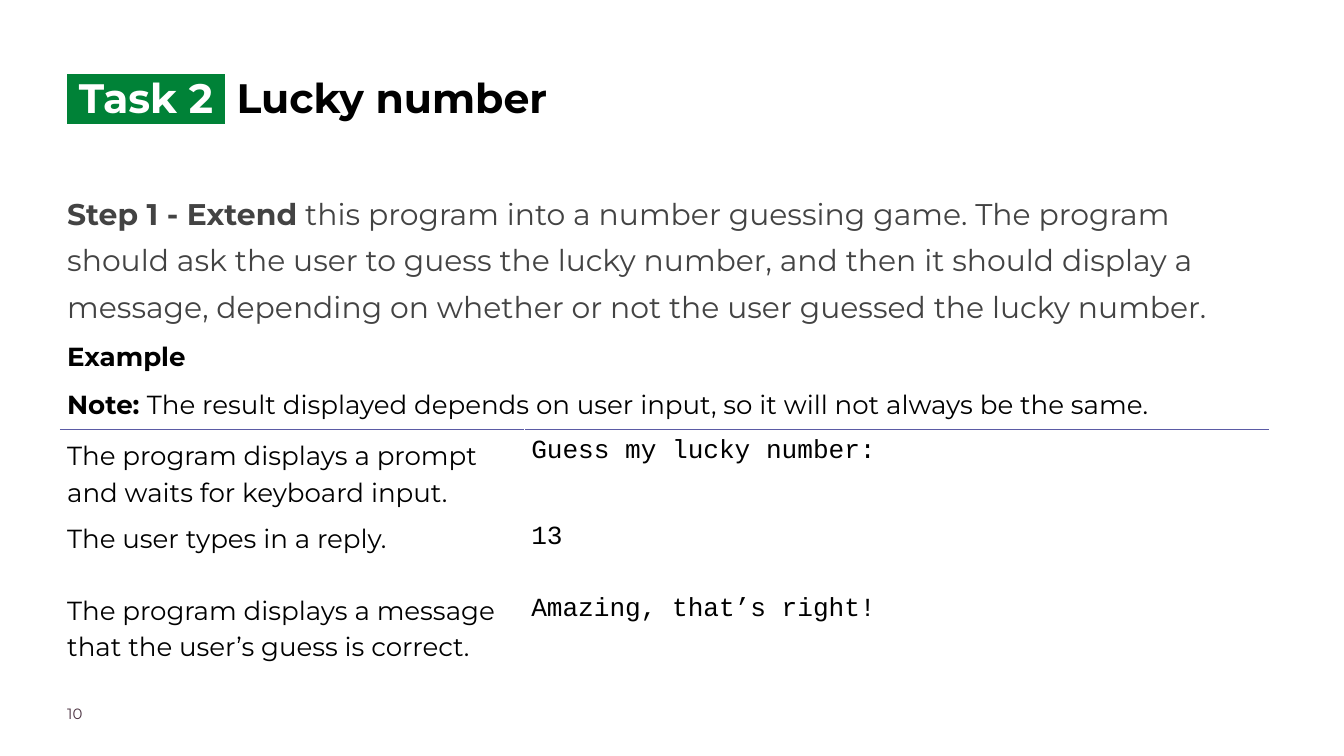
from lxml.etree import SubElement
from pptx import Presentation
from pptx.dml.color import RGBColor
from pptx.enum.text import MSO_ANCHOR, MSO_AUTO_SIZE, PP_ALIGN
from pptx.oxml import parse_xml
from pptx.oxml.ns import nsdecls, qn
from pptx.util import Emu, Pt

EMU_PER_PX = 9525
SANS, MONO = "Montserrat", "Courier New"
WHITE = RGBColor(0xFF, 0xFF, 0xFF)
BLACK = RGBColor(0x00, 0x00, 0x00)
GREEN = RGBColor(0x00, 0x82, 0x37)
GREY = RGBColor(0x43, 0x43, 0x43)
PLUM = RGBColor(0x4B, 0x32, 0x41)
VIOLET = RGBColor(0x5B, 0x5B, 0xA5)

COLUMN_WIDTHS = (663, 1064)
ROW_HEIGHTS = (58, 78, 123, 102, 102)
NOTE_ROW = 1
DIALOGUE = (
    ("The program displays a prompt and waits for keyboard input.", "Guess my lucky number:"),
    ("The user types in a reply.", "13"),
    ("The program displays a message that the user’s guess is correct.", "Amazing, that’s right!"),
)


def px(length):
    return Emu(length * EMU_PER_PX)


def write(frame, text, *, size, color=BLACK, font=SANS, bold=False, spacing=None):
    """Append a run to the frame's first paragraph and return it."""
    paragraph = frame.paragraphs[0]
    paragraph.alignment = PP_ALIGN.LEFT
    if spacing:
        paragraph.line_spacing = spacing
    run = paragraph.add_run()
    run.text = text
    run.font.size, run.font.name, run.font.bold = Pt(size), font, bold
    run.font.color.rgb = color
    return run


def highlight(run, color):
    fill = run.font._element.find(qn("a:solidFill"))
    fill.addnext(parse_xml(
        f'<a:highlight {nsdecls("a")}><a:srgbClr val="{color}"/></a:highlight>'))


def prepare_frame(shape, left, top, width, height):
    """Place a text shape and remove its margins."""
    shape.left, shape.top, shape.width, shape.height = map(px, (left, top, width, height))
    frame = shape.text_frame
    frame.margin_left = frame.margin_top = frame.margin_right = frame.margin_bottom = 0
    frame.auto_size = MSO_AUTO_SIZE.NONE
    frame.vertical_anchor = MSO_ANCHOR.TOP
    frame.word_wrap = True
    return frame


def add_text_box(slide, *bounds):
    return prepare_frame(slide.shapes.add_textbox(0, 0, 0, 0), *bounds)


def format_cell(cell, top_line=WHITE, bottom_line=WHITE):
    properties = cell._tc.get_or_add_tcPr()
    for side, color in zip("LRTB", (WHITE, WHITE, top_line, bottom_line)):
        line = SubElement(properties, qn(f"a:ln{side}"), w=str(Pt(1)))
        SubElement(SubElement(line, qn("a:solidFill")), qn("a:srgbClr"), val=str(color))
    cell.fill.background()
    cell.margin_left = cell.margin_right = px(10)
    cell.margin_top = cell.margin_bottom = px(4)


def add_example_table(slide):
    table = slide.shapes.add_table(
        len(ROW_HEIGHTS), len(COLUMN_WIDTHS), px(86), px(478),
        px(sum(COLUMN_WIDTHS)), px(sum(ROW_HEIGHTS))).table
    table.first_row = table.horz_banding = False
    for column, width in zip(table.columns, COLUMN_WIDTHS):
        column.width = px(width)
    for index, (row, height) in enumerate(zip(table.rows, ROW_HEIGHTS)):
        row.height = px(height)
        for cell in row.cells:
            format_cell(cell,
                        top_line=VIOLET if index == NOTE_ROW + 1 else WHITE,
                        bottom_line=VIOLET if index == NOTE_ROW else WHITE)

    heading, note = table.cell(0, 0), table.cell(NOTE_ROW, 0)
    note.merge(table.cell(NOTE_ROW, 1))
    for cell in (heading, note):
        cell.vertical_anchor = MSO_ANCHOR.MIDDLE
        cell.margin_top = cell.margin_bottom = 0
    write(heading.text_frame, "Example", size=28, bold=True, spacing=1.14)
    write(note.text_frame, "Note: ", size=28, bold=True, spacing=1.14)
    write(note.text_frame,
          "The result displayed depends on user input, so it will not always be the same.",
          size=28, spacing=1.14)

    for index, (action, output) in enumerate(DIALOGUE, start=NOTE_ROW + 1):
        write(table.cell(index, 0).text_frame, action, size=28, spacing=1.15)
        write(table.cell(index, 1).text_frame, output, size=28, font=MONO, spacing=1.15)
    table.cell(NOTE_ROW + 1, 0).margin_top = px(8)


def main():
    presentation = Presentation()
    presentation.slide_width, presentation.slide_height = px(1920), px(1080)
    slide = presentation.slides.add_slide(presentation.slide_layouts[5])

    title = prepare_frame(slide.shapes.title, 96, 93, 1386, 171)
    task = write(title, " Task 2 ", size=44, color=WHITE, bold=True, spacing=1.15)
    highlight(task, GREEN)
    write(title, " Lucky number", size=44, bold=True, spacing=1.15)

    step = add_text_box(slide, 96, 264, 1727, 663)
    write(step, "Step 1 - Extend", size=32, color=GREY, bold=True, spacing=1.3)
    write(step,
          " this program into a number guessing game. The program should ask the user "
          "to guess the lucky number, and then it should display a message, depending "
          "on whether or not the user guessed the lucky number.",
          size=32, color=GREY, spacing=1.3)

    page_number = add_text_box(slide, 96, 1006, 151, 37)
    write(page_number, "10", size=16, color=PLUM)

    add_example_table(slide)
    presentation.save("out.pptx")


if __name__ == "__main__":
    main()
